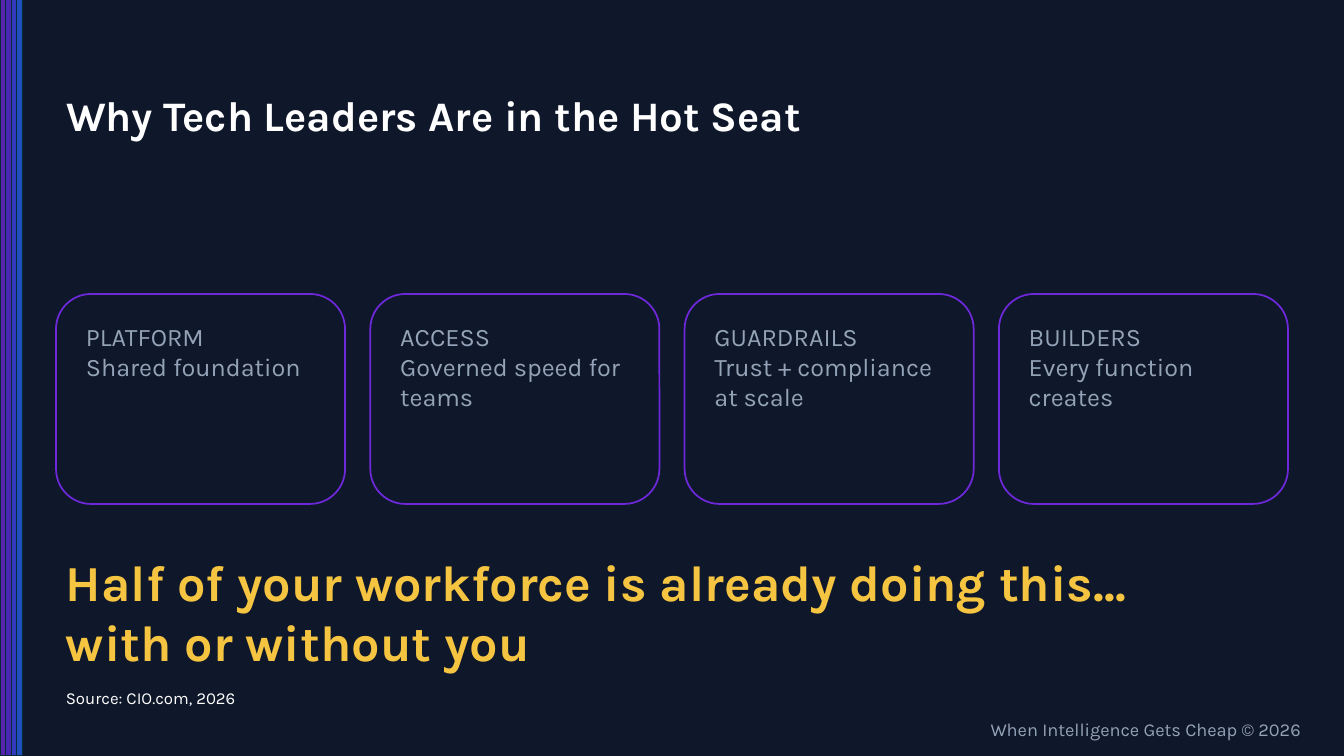
import pptx
import pptx.dml.color
import pptx.enum.shapes
import pptx.enum.text
import pptx.oxml
import pptx.oxml.ns
import pptx.util

Pt = pptx.util.Pt
ALIGN = pptx.enum.text.PP_ALIGN
SHAPES = pptx.enum.shapes.MSO_SHAPE

NAVY, PURPLE, SLATE = "0F172A", "6D28D9", "94A3B8"
WHITE, GOLD, STRIPE_EDGE = "FFFFFF", "F5C542", "092A39"
STRIPES = [PURPLE, "5B2FE0", "3F48F0", "2563EB"]
PILLARS = [
    ("PLATFORM", "Shared foundation"),
    ("ACCESS", "Governed speed for teams"),
    ("GUARDRAILS", "Trust + compliance at scale"),
    ("BUILDERS", "Every function creates"),
]
MARGIN, CONTENT_WIDTH, PILLAR_GAP, STRIPE_WIDTH = 40, 880, 18, 4


def rgb(value):
    return pptx.dml.color.RGBColor.from_string(value)


class Deck:
    font = "Karla"

    def __init__(self, width, height, background):
        self.file = pptx.Presentation()
        self.file.slide_width, self.file.slide_height = Pt(width), Pt(height)
        self.slide = self.file.slides.add_slide(self.file.slide_layouts[5])
        fill = self.slide.background.fill
        fill.solid()
        fill.fore_color.rgb = rgb(background)

    def set_lines(self, frame, lines, size, color, bold=False, align=ALIGN.LEFT,
                  insets=(7.2, 3.6)):
        frame.word_wrap = True
        frame.vertical_anchor = pptx.enum.text.MSO_ANCHOR.TOP
        frame.margin_left = frame.margin_right = Pt(insets[0])
        frame.margin_top = frame.margin_bottom = Pt(insets[1])
        for index, line in enumerate(lines):
            paragraph = frame.add_paragraph() if index else frame.paragraphs[0]
            paragraph.alignment = align
            run = paragraph.add_run()
            run.text = line
            run.font.name, run.font.size, run.font.bold = self.font, Pt(size), bold
            run.font.color.rgb = rgb(color)

    def title(self, box, line, size, color):
        heading = self.slide.shapes.title
        heading.left, heading.top, heading.width, heading.height = map(Pt, box)
        self.set_lines(heading.text_frame, [line], size, color, bold=True)
        heading.text_frame.auto_size = pptx.enum.text.MSO_AUTO_SIZE.NONE

    def text(self, box, lines, size, color, **style):
        frame = self.slide.shapes.add_textbox(*map(Pt, box)).text_frame
        self.set_lines(frame, lines, size, color, **style)
        frame.auto_size = pptx.enum.text.MSO_AUTO_SIZE.SHAPE_TO_FIT_TEXT

    def panel(self, kind, box, fill, opacity, edge, edge_width):
        panel = self.slide.shapes.add_shape(kind, *map(Pt, box))
        panel.shadow.inherit = False
        panel.fill.solid()
        panel.fill.fore_color.rgb = rgb(fill)
        tint = panel.element.spPr.find(".//" + pptx.oxml.ns.qn("a:srgbClr"))
        tint.append(pptx.oxml.parse_xml(
            f'<a:alpha {pptx.oxml.ns.nsdecls("a")} val="{opacity * 1000}"/>'))
        panel.line.color.rgb = rgb(edge)
        panel.line.width = Pt(edge_width)
        return panel


def main():
    deck = Deck(960, 540, NAVY)
    for index, color in reversed(list(enumerate(STRIPES))):
        deck.panel(SHAPES.RECTANGLE, (index * STRIPE_WIDTH, 0, STRIPE_WIDTH, 540),
                   color, 75, STRIPE_EDGE, 0)

    deck.title((MARGIN, 60, CONTENT_WIDTH, 73), "Why Tech Leaders Are in the Hot Seat", 30, WHITE)
    deck.text((681, 509.5, 255, 23), ["When Intelligence Gets Cheap © 2026"], 13, SLATE,
              align=ALIGN.RIGHT)

    pitch = (CONTENT_WIDTH + PILLAR_GAP) / len(PILLARS)
    for index, pillar in enumerate(PILLARS):
        card = deck.panel(SHAPES.ROUNDED_RECTANGLE,
                          (MARGIN + index * pitch, 210, pitch - PILLAR_GAP, 150),
                          NAVY, 85, PURPLE, 1.25)
        deck.set_lines(card.text_frame, pillar, 18, SLATE, insets=(14, 12))

    deck.text((MARGIN, 390, CONTENT_WIDTH, 94),
              ["Half of your workforce is already doing this...", "with or without you"],
              36, GOLD, bold=True)
    deck.text((MARGIN, 488, 640, 21.5), ["Source: CIO.com, 2026"], 12, WHITE)
    deck.file.save("out.pptx")


if __name__ == "__main__":
    main()
